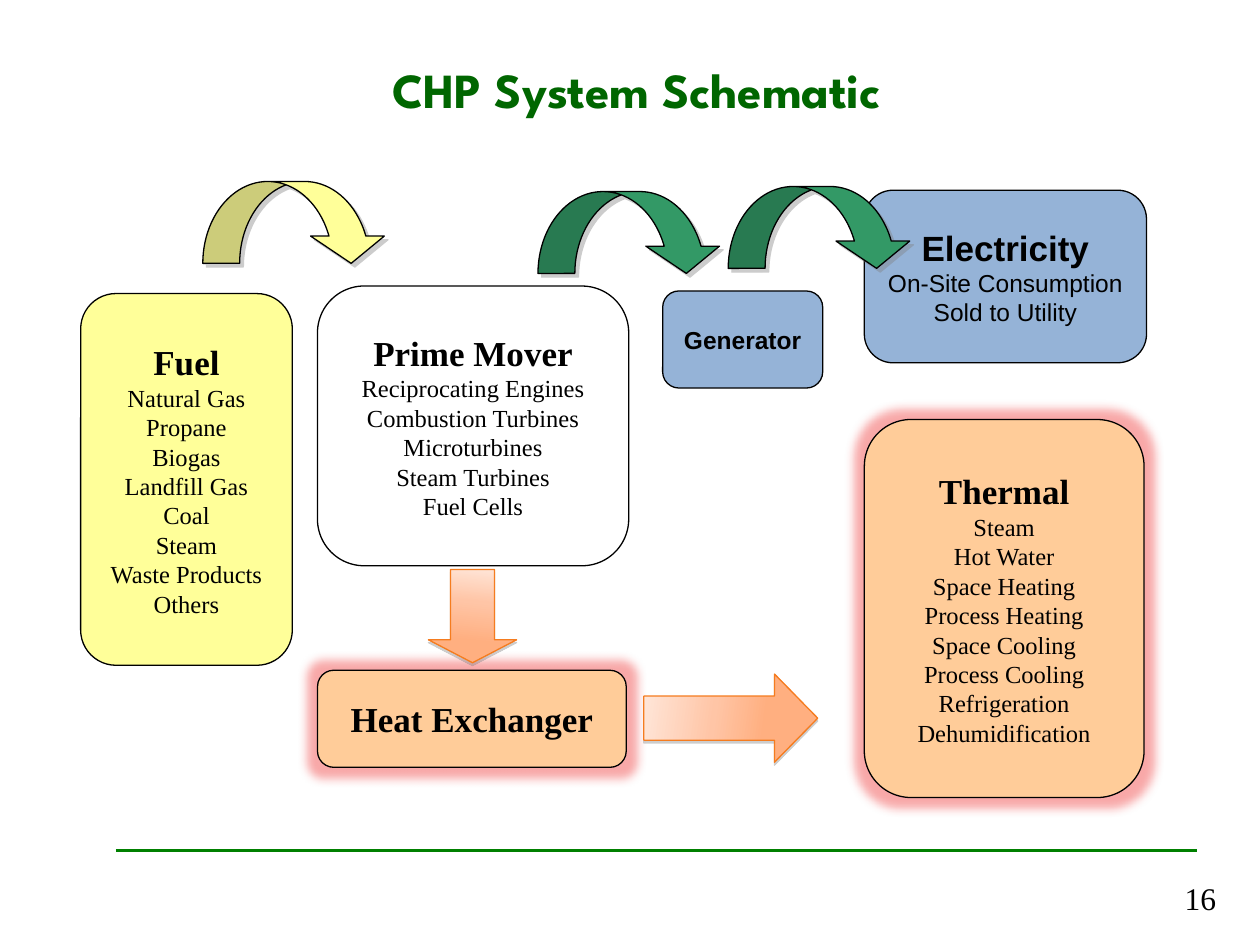
from dataclasses import dataclass
from typing import Any, Optional

from lxml.etree import SubElement
from pptx import Presentation
from pptx.dml.color import RGBColor
from pptx.enum.shapes import MSO_CONNECTOR, MSO_SHAPE
from pptx.enum.text import MSO_ANCHOR, PP_ALIGN
from pptx.oxml import parse_xml
from pptx.oxml.ns import nsdecls, qn
from pptx.shapes.autoshape import Shape
from pptx.slide import Slide
from pptx.util import Pt

EMU_PER_PX = 9144


@dataclass(frozen=True)
class Theme:
    ink: str = "000000"
    white: str = "FFFFFF"
    title: str = "006600"
    rule: str = "008000"
    fuel: str = "FFFF99"
    power: str = "95B3D7"
    power_arrow: str = "339966"
    heat: str = "FFCC99"
    heat_edge: str = "F57C1F"
    glow: str = "F04040"
    shadow: str = "808080"
    serif: str = "Times New Roman"
    sans: str = "Arial"
    display: str = "League Spartan"
    title_size: int = 28
    number_size: int = 18
    heading_size: int = 20
    item_size: int = 14
    edge_width: float = 0.75
    rule_width: float = 1.5


THEME = Theme()


@dataclass(frozen=True)
class Frame:
    left: int
    top: int
    width: int
    height: int

    def emu(self) -> tuple[int, ...]:
        return tuple(px(side) for side in (self.left, self.top, self.width, self.height))


@dataclass(frozen=True)
class Stage:
    frame: Frame
    fill: str
    heading: str
    items: tuple[str, ...] = ()
    font: str = THEME.serif
    heading_size: int = THEME.heading_size
    glows: bool = False


@dataclass(frozen=True)
class FlowArrow:
    frame: Frame
    fill: str


@dataclass(frozen=True)
class HeatArrow:
    frame: Frame
    head: float
    stops: tuple[int, int]
    angle: int
    rotation: int = 0


STAGES = (
    Stage(Frame(252, 227, 247, 222), THEME.white, "Prime Mover",
          ("Reciprocating Engines", "Combustion Turbines", "Microturbines",
           "Steam Turbines", "Fuel Cells")),
    Stage(Frame(686, 151, 224, 137), THEME.power, "Electricity",
          ("On-Site Consumption", "Sold to Utility"), THEME.sans),
    Stage(Frame(64, 233, 168, 295), THEME.fuel, "Fuel",
          ("Natural Gas", "Propane", "Biogas", "Landfill Gas", "Coal", "Steam",
           "Waste Products", "Others")),
    Stage(Frame(526, 231, 127, 77), THEME.power, "Generator",
          font=THEME.sans, heading_size=THEME.item_size),
    Stage(Frame(252, 532, 245, 77), THEME.heat, "Heat Exchanger", glows=True),
    Stage(Frame(686, 333, 222, 300), THEME.heat, "Thermal",
          ("Steam", "Hot Water", "Space Heating", "Process Heating", "Space Cooling",
           "Process Cooling", "Refrigeration", "Dehumidification"), glows=True),
)
FLOW_ARROWS = (
    FlowArrow(Frame(161, 144, 147, 65), THEME.fuel),
    FlowArrow(Frame(427, 152, 147, 65), THEME.power_arrow),
    FlowArrow(Frame(578, 148, 147, 65), THEME.power_arrow),
)
HEAT_ARROWS = (
    HeatArrow(Frame(338, 454, 74, 70), 0.26, (36, 75), 6, rotation=90),
    HeatArrow(Frame(511, 535, 138, 70), 0.49, (41, 69), 8),
)
HEAT_SHADES = ("FFE7DA", "FFC5A6", "FFAF80", "FFAF80")


def px(length: int) -> int:
    return length * EMU_PER_PX


def assign(target: Any, formats: dict[str, Any]) -> None:
    for name, value in formats.items():
        setattr(target, name, value)


def write(para: Any, text: str, font: str, size: int, align: PP_ALIGN,
          bold: bool = False, color: str = THEME.ink) -> None:
    para.alignment = align
    span = para.add_run()
    span.text = text
    assign(span.font, {"name": font, "size": Pt(size), "bold": bold})
    span.font.color.rgb = RGBColor.from_string(color)


def add_effect(shape: Shape, kind: str, color: str, opacity: int, **settings: int) -> None:
    effects = shape._element.spPr.find(qn("a:effectLst"))
    effect = SubElement(effects, qn(f"a:{kind}"),
                        {name: str(value) for name, value in settings.items()})
    shade = SubElement(effect, qn("a:srgbClr"), val=color)
    SubElement(shade, qn("a:alpha"), val=str(opacity * 1000))


def add_shadow(shape: Shape, opacity: int, distance: float, direction: int) -> None:
    add_effect(shape, "outerShdw", THEME.shadow, opacity, blurRad=0,
               dist=Pt(distance), dir=direction * 60000, rotWithShape=0)


def add_outlined(page: Slide, kind: MSO_SHAPE, frame: Frame, adjustments: tuple[float, ...],
                 fill: str, edge: str = THEME.ink) -> Shape:
    shape = page.shapes.add_shape(kind, *frame.emu())
    for index, value in enumerate(adjustments):
        shape.adjustments[index] = value
    shape.fill.solid()
    shape.fill.fore_color.rgb = RGBColor.from_string(fill)
    shape.line.color.rgb = RGBColor.from_string(edge)
    shape.line.width = Pt(THEME.edge_width)
    shape.shadow.inherit = False
    return shape


def draw_stage(page: Slide, stage: Stage) -> None:
    box = add_outlined(page, MSO_SHAPE.ROUNDED_RECTANGLE, stage.frame, (0.167,), stage.fill)
    if stage.glows:
        add_effect(box, "glow", THEME.glow, 45, rad=Pt(11))
    deck_text = box.text_frame
    assign(deck_text, {"word_wrap": False, "vertical_anchor": MSO_ANCHOR.MIDDLE})
    write(deck_text.paragraphs[0], stage.heading, stage.font, stage.heading_size,
          PP_ALIGN.CENTER, bold=True)
    for item in stage.items:
        write(deck_text.add_paragraph(), item, stage.font, THEME.item_size, PP_ALIGN.CENTER)


def draw_flow_arrow(page: Slide, arrow: FlowArrow) -> None:
    shape = add_outlined(page, MSO_SHAPE.CURVED_DOWN_ARROW, arrow.frame,
                         (0.45, 0.9, 0.333), arrow.fill)
    add_shadow(shape, opacity=40, distance=3, direction=45)


def draw_heat_arrow(page: Slide, arrow: HeatArrow) -> None:
    shape = add_outlined(page, MSO_SHAPE.RIGHT_ARROW, arrow.frame, (0.5, arrow.head),
                         HEAT_SHADES[-1], THEME.heat_edge)
    shape.rotation = arrow.rotation
    stops = "".join(
        f'<a:gs pos="{position * 1000}"><a:srgbClr val="{shade}"/></a:gs>'
        for position, shade in zip((0, *arrow.stops, 100), HEAT_SHADES))
    gradient = parse_xml(
        f'<a:gradFill {nsdecls("a")} rotWithShape="1"><a:gsLst>{stops}</a:gsLst>'
        f'<a:lin ang="{arrow.angle * 60000}" scaled="0"/></a:gradFill>')
    properties = shape._element.spPr
    properties.replace(properties.find(qn("a:solidFill")), gradient)
    add_shadow(shape, opacity=38, distance=1.6, direction=90)


def draw_rule(page: Slide) -> None:
    rule = page.shapes.add_connector(MSO_CONNECTOR.STRAIGHT, px(92), px(675), px(950), px(675))
    rule.line.color.rgb = RGBColor.from_string(THEME.rule)
    rule.line.width = Pt(THEME.rule_width)
    SubElement(rule._element.spPr, qn("a:effectLst"))


def draw_title(page: Slide) -> None:
    title = page.shapes.title
    assign(title, dict(zip(("left", "top", "width", "height"), Frame(55, 8, 900, 125).emu())))
    title.text_frame.vertical_anchor = MSO_ANCHOR.MIDDLE
    write(title.text_frame.paragraphs[0], "CHP System Schematic", THEME.display,
          THEME.title_size, PP_ALIGN.CENTER, bold=True, color=THEME.title)


def draw_page_number(page: Slide) -> None:
    box = page.shapes.add_textbox(*Frame(750, 693, 225, 40).emu())
    box.text_frame.word_wrap = True
    write(box.text_frame.paragraphs[0], "16", THEME.serif, THEME.number_size, PP_ALIGN.RIGHT)


def main() -> None:
    deck = Presentation()
    assign(deck, {"slide_width": px(1000), "slide_height": px(750)})
    page = deck.slides.add_slide(deck.slide_layouts[5])
    draw_rule(page)
    draw_title(page)
    for stage in STAGES:
        draw_stage(page, stage)
    for flow_arrow in FLOW_ARROWS:
        draw_flow_arrow(page, flow_arrow)
    for heat_arrow in HEAT_ARROWS:
        draw_heat_arrow(page, heat_arrow)
    draw_page_number(page)
    deck.save("out.pptx")


if __name__ == "__main__":
    main()
